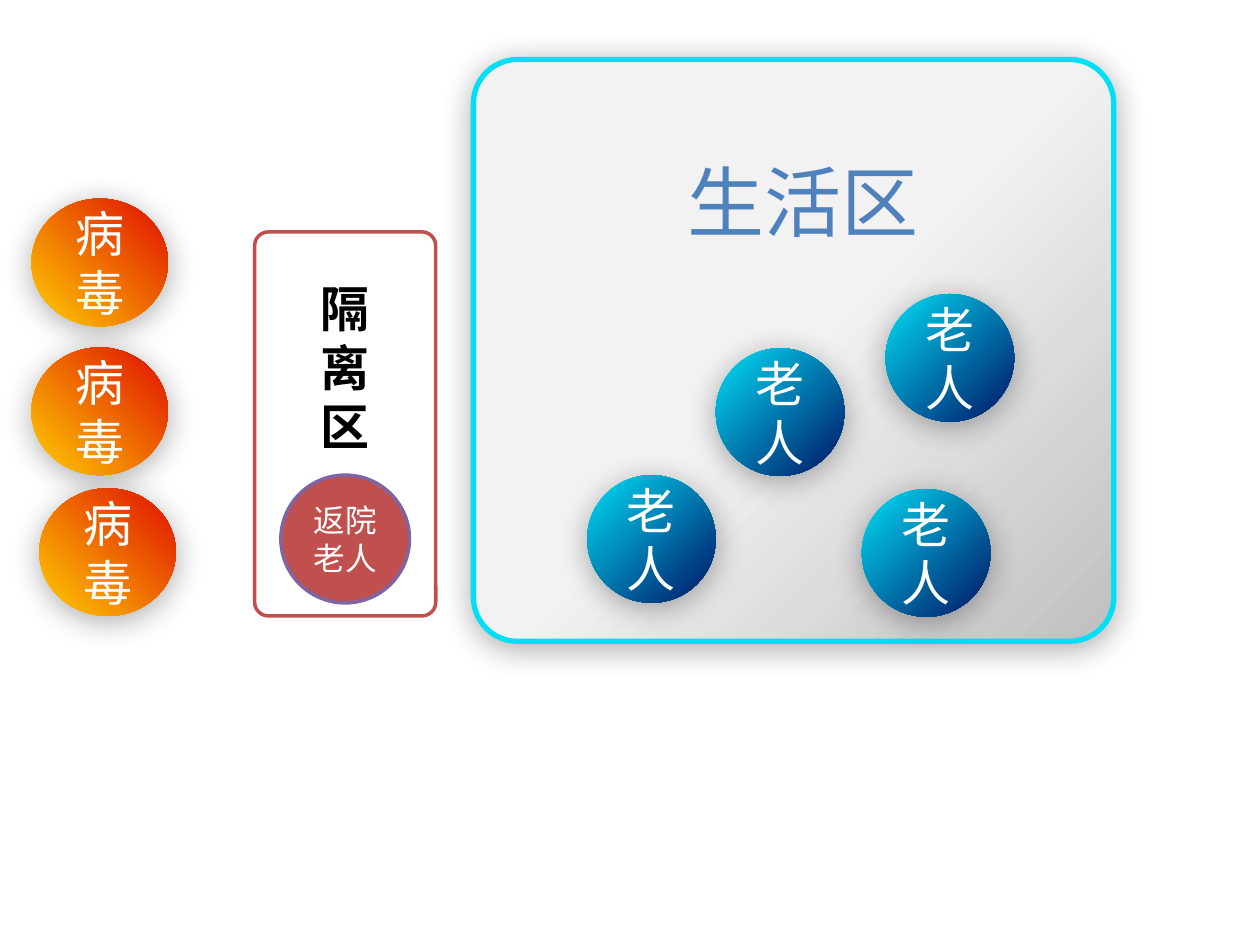
from lxml import etree
from pptx import Presentation
from pptx.dml.color import RGBColor
from pptx.enum import shapes, text
from pptx.oxml.ns import qn
from pptx.util import Pt

CJK = "Noto Sans CJK SC"
CIRCLE_HEIGHT = 73
VIRUS_WIDTH, ELDER_WIDTH = 78, 73.5
VIRUS_STOPS = [(0, "FFCF01"), (0.9, "E22000")]
ELDER_STOPS = [(0, "00DFF6"), (0.9, "002774")]
LIVING_STOPS = [(0.5, "F2F2F2"), (1, "BFBFBF")]


def rgb(value):
    """Turn a hex string into a colour."""
    return RGBColor.from_string(value)


def add_panel(slide, kind, box, line=None, line_width=2):
    """Add a preset shape without shadow, outlined when a line colour is given."""
    panel = slide.shapes.add_shape(kind, *map(Pt, box))
    panel.shadow.inherit = False
    if line:
        panel.line.color.rgb = rgb(line)
        panel.line.width = Pt(line_width)
    else:
        panel.line.fill.background()
    return panel


def fill_solid(panel, color):
    """Fill a shape with one colour."""
    panel.fill.solid()
    panel.fill.fore_color.rgb = rgb(color)


def fill_gradient(panel, stops, angle):
    """Fill a shape with a two-stop gradient at a counter-clockwise angle."""
    panel.fill.gradient()
    panel.fill.gradient_angle = angle
    for stop, (position, color) in zip(panel.fill.gradient_stops, stops):
        stop.position = position
        stop.color.rgb = rgb(color)


def add_soft_shadow(panel):
    """Give a shape a blurred black shadow falling just below it."""
    effects = panel._element.spPr.find(qn("a:effectLst"))
    shadow = etree.SubElement(effects, qn("a:outerShdw"), blurRad=str(Pt(17.8)),
                              dist=str(Pt(3)), dir=str(87 * 60000), rotWithShape="0")
    black = etree.SubElement(shadow, qn("a:srgbClr"), val="000000")
    etree.SubElement(black, qn("a:alpha"), val="33000")


def write(panel, words, size, color, font, bold=False, align=text.PP_ALIGN.CENTER):
    """Write the words into a shape, one paragraph a line."""
    frame = panel.text_frame
    frame.text = words
    for paragraph in frame.paragraphs:
        paragraph.alignment = align
        for run in paragraph.runs:
            run.font.size = Pt(size)
            run.font.name = font
            run.font.bold = bold
            run.font.color.rgb = rgb(color)
    return frame


def add_person_or_virus(slide, box, label, stops, angle):
    """Add a shaded circle with a white label."""
    circle = add_panel(slide, shapes.MSO_SHAPE.OVAL, box)
    fill_gradient(circle, stops, angle)
    add_soft_shadow(circle)
    frame = write(circle, label, 28, "FFFFFF", CJK)
    frame.vertical_anchor = text.MSO_ANCHOR.MIDDLE
    frame.word_wrap = True


def add_viruses(slide, left, top):
    """Stack the viruses outside the home."""
    for dx, dy in [(0, 0), (0, 85), (4.5, 165.5)]:
        box = (left + dx, top + dy, VIRUS_WIDTH, CIRCLE_HEIGHT)
        add_person_or_virus(slide, box, "病毒", VIRUS_STOPS, 45)


def add_isolation_area(slide, left, top, width, height):
    """Add the isolation area with the returning resident in it."""
    area = add_panel(slide, shapes.MSO_SHAPE.ROUNDED_RECTANGLE,
                     (left, top, width, height), "C0504D")
    area.adjustments[0] = 0.076
    fill_solid(area, "FFFFFF")
    frame = write(area, "隔\n离\n区", 28, "000000", "Calibri", bold=True)
    frame.vertical_anchor = text.MSO_ANCHOR.MIDDLE
    frame.margin_bottom = Pt(69)

    box = (left + (width - ELDER_WIDTH) / 2, top + 139, ELDER_WIDTH, CIRCLE_HEIGHT)
    returner = add_panel(slide, shapes.MSO_SHAPE.OVAL, box, "8064A2")
    fill_solid(returner, "C0504D")
    frame = write(returner, "返院老人", 18, "FFFFFF", CJK)
    frame.vertical_anchor = text.MSO_ANCHOR.MIDDLE
    frame.word_wrap = True


def add_living_area(slide, left, top, width, height):
    """Add the living area with its title and residents."""
    area = add_panel(slide, shapes.MSO_SHAPE.ROUNDED_RECTANGLE,
                     (left, top, width, height), "00DFF6", 3)
    area.adjustments[0] = 0.076
    fill_gradient(area, LIVING_STOPS, 315)
    add_soft_shadow(area)

    title = slide.shapes.add_textbox(*map(Pt, (left + 115, top + 50.5, 167, 60.5)))
    write(title, "生活区", 44, "4F81BD", "Arial", align=text.PP_ALIGN.LEFT)
    title.text_frame.word_wrap = True

    for dx, dy in [(138.5, 165), (235.5, 134), (222, 245.5), (65, 237.5)]:
        box = (left + dx, top + dy, ELDER_WIDTH, CIRCLE_HEIGHT)
        add_person_or_virus(slide, box, "老人", ELDER_STOPS, 315)


def main():
    """Build the slide and save it."""
    deck = Presentation()
    deck.slide_width, deck.slide_height = Pt(720), Pt(540)
    slide = deck.slides.add_slide(deck.slide_layouts[6])
    add_living_area(slide, 270.5, 34, 366, 332.5)
    add_isolation_area(slide, 145.5, 132.5, 103.5, 219.5)
    add_viruses(slide, 18, 113.5)
    deck.save("out.pptx")


if __name__ == "__main__":
    main()
